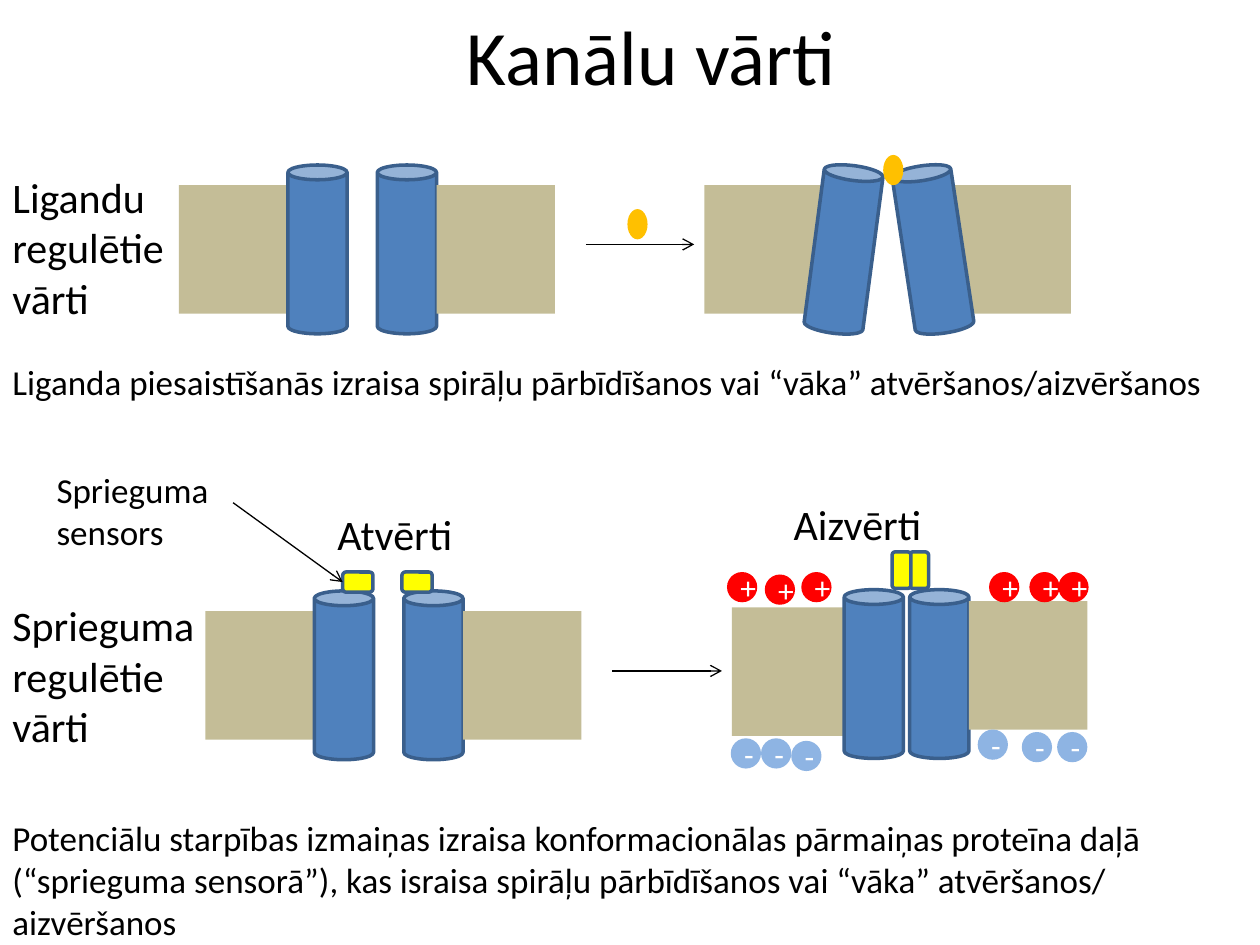
from lxml import etree
from pptx import Presentation
from pptx.dml.color import RGBColor
from pptx.enum.shapes import MSO_CONNECTOR, MSO_SHAPE
from pptx.enum.text import MSO_ANCHOR, MSO_AUTO_SIZE, PP_ALIGN
from pptx.oxml.ns import qn
from pptx.util import Inches, Pt

RECTANGLE, ROUNDED = MSO_SHAPE.RECTANGLE, MSO_SHAPE.ROUNDED_RECTANGLE
OVAL, CAN = MSO_SHAPE.OVAL, MSO_SHAPE.CAN
STRAIGHT = MSO_CONNECTOR.STRAIGHT
CENTER, MIDDLE = PP_ALIGN.CENTER, MSO_ANCHOR.MIDDLE
FIT_SHAPE = MSO_AUTO_SIZE.SHAPE_TO_FIT_TEXT

WIDTH, HEIGHT = Inches(10), Inches(7.5)
COLUMN, ROW = WIDTH / 100, HEIGHT / 75
FONT = "Calibri"
COLORS = {
    "text": "000000", "sign": "FFFFFF", "membrane": "C4BD97",
    "helix": "4F81BD", "outline": "3A5F8C", "ligand": "FFC000",
    "sensor": "FFFF00", "+": "FF0000", "-": "8EB4E3",
}

LABELS = [
    (0, 13.1, 20.1, 13.1, 24, "Ligandu regulētie vārti"),
    (25.8, 39.9, 18.9, 5, 24, "Atvērti"),
    (62, 39.1, 18.9, 5, 24, "Aizvērti"),
    (0, 47.1, 20.1, 13.1, 24, "Sprieguma regulētie vārti"),
    (0, 28.1, 96.5, 4.4, 20,
     "Liganda piesaistīšanās izraisa spirāļu pārbīdīšanos vai “vāka” "
     "atvēršanos/aizvēršanos"),
    (0, 64.3, 100, 11.1, 20,
     "Potenciālu starpības izmaiņas izraisa konformacionālas pārmaiņas "
     "proteīna daļā (“sprieguma sensorā”), kas israisa spirāļu "
     "pārbīdīšanos vai “vāka” atvēršanos/ aizvēršanos"),
    (3.5, 36.7, 18.5, 7.7, 20, "Sprieguma sensors"),
]
CHARGES = {
    "+": [(84, 45.4), (57.7, 45.4), (60.7, 45.6),
          (81.7, 45.4), (78.5, 45.4), (63.6, 45.4)],
    "-": [(58, 58.6), (60.4, 58.6), (62.8, 58.8),
          (77.6, 57.9), (81.1, 58.1), (83.9, 58.1)],
}


def color(name):
    return RGBColor.from_string(COLORS[name])


def box(left, top, width, height):
    return [round(value) for value in
            (left * COLUMN, top * ROW, width * COLUMN, height * ROW)]


def add_run(paragraph, text, size, color_name):
    run = paragraph.add_run()
    run.text = text
    run.font.name = FONT
    run.font.size = Pt(size)
    run.font.color.rgb = color(color_name)


def add_title(slide, text):
    title = slide.shapes.title
    title.left, title.top, title.width, title.height = box(6.7, -1.9, 90, 12.5)
    title.text_frame.vertical_anchor = MIDDLE
    paragraph = title.text_frame.paragraphs[0]
    paragraph.alignment = CENTER
    add_run(paragraph, text, 44, "text")


def add_label(slide, left, top, width, height, size, text):
    frame = slide.shapes.add_textbox(*box(left, top, width, height)).text_frame
    frame.word_wrap = True
    frame.auto_size = FIT_SHAPE
    add_run(frame.paragraphs[0], text, size, "text")


def add_figure(slide, preset, bounds, fill, outlined=False):
    shape = slide.shapes.add_shape(preset, *box(*bounds))
    shape.shadow.inherit = False
    shape.fill.solid()
    shape.fill.fore_color.rgb = color(fill)
    if outlined:
        shape.line.color.rgb = color("outline")
        shape.line.width = Pt(2)
    else:
        shape.line.fill.background()
    return shape


def add_membrane(slide, left, top):
    add_figure(slide, RECTANGLE, (left, top, 9.4, 10.2), "membrane")


def add_helix(slide, left, top, rotation=0):
    helix = add_figure(slide, CAN, (left, top, 4.7, 13.4), "helix", True)
    helix.rotation = rotation


def add_open_channel(slide, left, top):
    add_membrane(slide, left, top)
    for offset in (8.65, 15.75):
        add_helix(slide, left + offset, top - 1.6)
    add_membrane(slide, left + 20.45, top)


def add_ligand(slide, left, top):
    add_figure(slide, OVAL, (left, top, 1.6, 2.4), "ligand")


def add_sensor(slide, left, top, width, height):
    return add_figure(slide, ROUNDED, (left, top, width, height), "sensor", True)


def add_charge(slide, sign, left, top):
    frame = add_figure(slide, OVAL, (left, top, 2.4, 2.4), sign).text_frame
    frame.vertical_anchor = MIDDLE
    paragraph = frame.paragraphs[0]
    paragraph.alignment = CENTER
    add_run(paragraph, sign, 18, "sign")


def add_arrow(slide, start, end):
    arrow = slide.shapes.add_connector(STRAIGHT, *box(*start, *end))
    arrow.line.color.rgb = color("text")
    arrow.line.width = Pt(0.75)
    line = arrow.line._get_or_add_ln()
    etree.SubElement(line, qn("a:tailEnd"), type="arrow")
    etree.SubElement(arrow._element.spPr, qn("a:effectLst"))
    return arrow


def add_ligand_gate(slide):
    add_membrane(slide, 75.6, 14.7)
    add_open_channel(slide, 14.2, 14.7)
    add_membrane(slide, 55.9, 14.7)
    add_helix(slide, 64.6, 13.1, 7.5)
    add_helix(slide, 71.7, 13.1, 351.4)
    add_ligand(slide, 70.1, 12.3)
    add_arrow(slide, (46.5, 19.4), (55.1, 19.4))
    add_ligand(slide, 49.8, 16.6)


def add_voltage_gate(slide):
    add_open_channel(slide, 16.3, 48.5)
    add_arrow(slide, (48.6, 53.25), (57.3, 53.25))
    add_membrane(slide, 58.1, 48.2)
    for left in (67, 72.2):
        add_helix(slide, left, 46.8)
    add_membrane(slide, 76.9, 47.7)
    for sign, places in CHARGES.items():
        for left, top in places:
            add_charge(slide, sign, left, top)
    first_sensor = add_sensor(slide, 27.2, 45.4, 2.4, 1.6)
    add_sensor(slide, 31.9, 45.4, 2.4, 1.6)
    for left in (72.2, 70.8):
        add_sensor(slide, left, 43.8, 1.5, 2.9)
    pointer = add_arrow(slide, (18.5, 39.9), (27.2, 46.2))
    pointer.end_connect(first_sensor, 1)


def main():
    presentation = Presentation()
    presentation.slide_width, presentation.slide_height = WIDTH, HEIGHT
    layout = presentation.slide_layouts.get_by_name("Title Only")
    slide = presentation.slides.add_slide(layout)
    add_title(slide, "Kanālu vārti")
    add_ligand_gate(slide)
    add_voltage_gate(slide)
    for label in LABELS:
        add_label(slide, *label)
    presentation.save("out.pptx")


if __name__ == "__main__":
    main()
